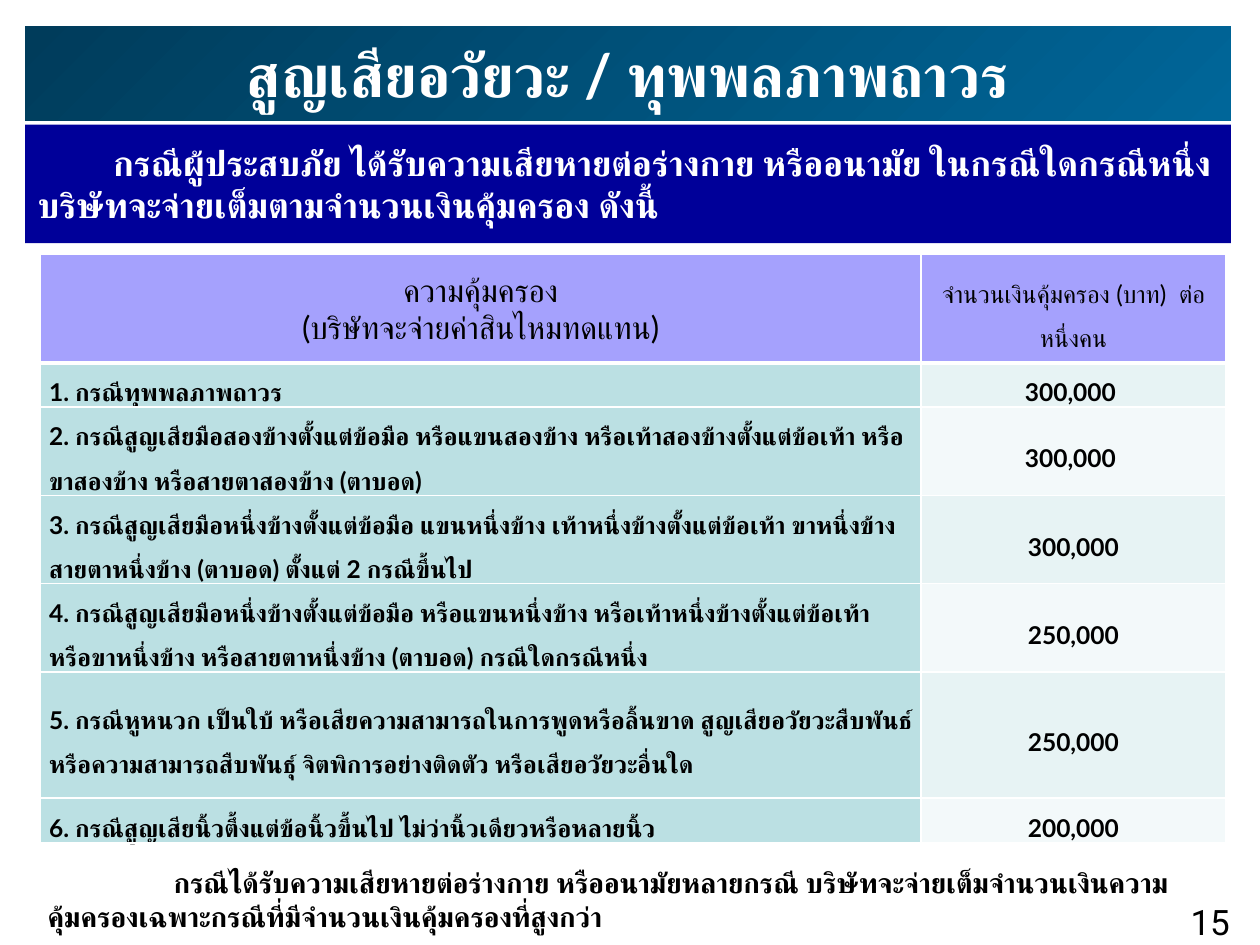
import pptx
import pptx.dml.color
import pptx.enum.shapes
import pptx.enum.text
import pptx.oxml
import pptx.oxml.ns
import pptx.util
import lxml.etree

RGBColor = pptx.dml.color.RGBColor
Align = pptx.enum.text.PP_ALIGN
Anchor = pptx.enum.text.MSO_ANCHOR

WHITE = RGBColor(0xFF, 0xFF, 0xFF)
BLACK = RGBColor(0, 0, 0)
DEEP_TEAL = RGBColor(0x00, 0x3C, 0x5B)
TEAL = RGBColor(0x00, 0x66, 0x99)
NAVY = RGBColor(0x00, 0x00, 0x99)
LILAC = RGBColor(0xA5, 0xA1, 0xFD)
AQUA = RGBColor(0xBB, 0xE0, 0xE3)
STRIPES = [RGBColor(0xE7, 0xF3, 0xF4), RGBColor(0xF3, 0xF9, 0xFA)]

WIDTH, HEIGHT = 10, 7.5
COLUMN_WIDTHS = [6.99, 2.42]
ROW_HEIGHTS = [0.86, 0.35, 0.7, 0.7, 0.7, 1, 0.36]

COVERAGE = [
    ("1. กรณีทุพพลภาพถาวร", "300,000 "),
    ("2. กรณีสูญเสียมือสองข้างตั้งแต่ข้อมือ หรือแขนสองข้าง หรือเท้าสองข้างตั้งแต่ข้อเท้า "
     "หรือขาสองข้าง หรือสายตาสองข้าง (ตาบอด)", "300,000 "),
    ("3. กรณีสูญเสียมือหนึ่งข้างตั้งแต่ข้อมือ แขนหนึ่งข้าง เท้าหนึ่งข้างตั้งแต่ข้อเท้า "
     "ขาหนึ่งข้าง สายตาหนึ่งข้าง (ตาบอด) ตั้งแต่ 2 กรณีขึ้นไป", "300,000"),
    ("4. กรณีสูญเสียมือหนึ่งข้างตั้งแต่ข้อมือ หรือแขนหนึ่งข้าง หรือเท้าหนึ่งข้างตั้งแต่ข้อเท้า "
     "หรือขาหนึ่งข้าง หรือสายตาหนึ่งข้าง (ตาบอด) กรณีใดกรณีหนึ่ง", "250,000"),
    ("5. กรณีหูหนวก เป็นใบ้ หรือเสียความสามารถในการพูดหรือลิ้นขาด "
     "สูญเสียอวัยวะสืบพันธ์หรือความสามารถสืบพันธุ์ จิตพิการอย่างติดตัว หรือเสียอวัยวะอื่นใด",
     "250,000"),
    ("6. กรณีสูญเสียนิ้วตึ้งแต่ข้อนิ้วขึ้นไป ไม่ว่านิ้วเดียวหรือหลายนิ้ว", "200,000"),
]


class CoverageSlide:
    def __init__(self, deck, font="Lato"):
        self.deck = deck
        self.font = font
        self.slide = deck.slides.add_slide(deck.slide_layouts[5])

    def box(self, x, y, width, height):
        slide_width, slide_height = self.deck.slide_width, self.deck.slide_height
        return [round(share * side) for share, side in (
            (x, slide_width), (y, slide_height), (width, slide_width), (height, slide_height))]

    def add_text(self, paragraph, text, size, color=BLACK, bold=False, align=Align.LEFT,
                 spacing=None, indent=0, font=None):
        paragraph.alignment = align
        if spacing:
            paragraph.line_spacing = spacing
        if indent:
            paragraph._p.get_or_add_pPr().set("indent", str(pptx.util.Inches(indent)))
        run = paragraph.add_run()
        run.text = text
        run.font.size = pptx.util.Pt(size)
        run.font.bold = bold
        run.font.color.rgb = color
        run.font.name = font or self.font
        complex_script = lxml.etree.SubElement(run._r.rPr, pptx.oxml.ns.qn("a:cs"))
        complex_script.set("typeface", run.font.name)

    def title(self, text, share):
        heading = self.slide.shapes.title
        heading.left, heading.top, heading.width, heading.height = self.box(*share)
        heading.fill.gradient()
        heading.fill.gradient_angle = 315
        for stop, color in zip(heading.fill.gradient_stops, (DEEP_TEAL, TEAL)):
            stop.color.rgb = color
        frame = heading.text_frame
        frame.auto_size = pptx.enum.text.MSO_AUTO_SIZE.NONE
        frame.vertical_anchor = Anchor.MIDDLE
        self.add_text(frame.paragraphs[0], text, 34, WHITE, True, Align.CENTER)

    def band(self, text, share, indent):
        band = self.slide.shapes.add_shape(
            pptx.enum.shapes.MSO_SHAPE.RECTANGLE, *self.box(*share))
        band.shadow.inherit = False
        band.fill.solid()
        band.fill.fore_color.rgb = NAVY
        band.line.fill.background()
        band.text_frame.vertical_anchor = Anchor.MIDDLE
        self.add_text(band.text_frame.paragraphs[0], text, 20, WHITE, True, indent=indent)

    def note(self, text, share, size, **style):
        frame = self.slide.shapes.add_textbox(*self.box(*share)).text_frame
        frame.word_wrap = True
        self.add_text(frame.paragraphs[0], text, size, **style)

    def borders(self, cell, bottom):
        properties = cell._tc.get_or_add_tcPr()
        sides = {"lnL": 1, "lnR": 1, "lnT": 1, "lnB": bottom}
        for position, (side, points) in enumerate(sides.items()):
            properties.insert(position, pptx.oxml.parse_xml(
                f'<a:{side} {pptx.oxml.ns.nsdecls("a")} w="{pptx.util.Pt(points)}">'
                f'<a:solidFill><a:srgbClr val="{WHITE}"/></a:solidFill></a:{side}>'))

    def cell(self, cell, lines, fill, size=14, bottom=1, **style):
        cell.fill.solid()
        cell.fill.fore_color.rgb = fill
        self.borders(cell, bottom)
        cell.margin_left = cell.margin_right = pptx.util.Inches(0.07)
        cell.margin_top = cell.margin_bottom = 0
        cell.vertical_anchor = Anchor.MIDDLE
        frame = cell.text_frame
        for number, line in enumerate(lines):
            paragraph = frame.add_paragraph() if number else frame.paragraphs[0]
            self.add_text(paragraph, line, size, **style)

    def table(self, header, rows, share):
        table = self.slide.shapes.add_table(
            len(rows) + 1, len(header), *self.box(*share)).table
        for column, width in zip(table.columns, COLUMN_WIDTHS):
            column.width = pptx.util.Inches(width)
        for row, height in zip(table.rows, ROW_HEIGHTS):
            row.height = pptx.util.Inches(height)
        coverage, amount = header
        self.cell(table.cell(0, 0), coverage, LILAC, 18, 3, align=Align.CENTER)
        self.cell(table.cell(0, 1), amount, LILAC, bottom=3, align=Align.CENTER, spacing=1.5)
        for number, (case, payout) in enumerate(rows):
            self.cell(table.cell(number + 1, 0), [case], AQUA, bold=True, spacing=1.5)
            self.cell(table.cell(number + 1, 1), [payout], STRIPES[number % 2],
                      bold=True, align=Align.CENTER, spacing=1.5)


def main():
    deck = pptx.Presentation()
    deck.slide_width = pptx.util.Inches(WIDTH)
    deck.slide_height = pptx.util.Inches(HEIGHT)
    page = CoverageSlide(deck)
    page.title("สูญเสียอวัยวะ / ทุพพลภาพถาวร", (0.02, 0.21 / HEIGHT, 0.957, 0.1))
    page.band("กรณีผู้ประสบภัย ได้รับความเสียหายต่อร่างกาย หรืออนามัย ในกรณีใดกรณีหนึ่ง "
              "บริษัทจะจ่ายเต็มตามจำนวนเงินคุ้มครอง ดังนี้",
              (0.02, 0.99 / HEIGHT, 0.957, 0.94 / HEIGHT), indent=0.6)
    page.table((["ความคุ้มครอง", "(บริษัทจะจ่ายค่าสินไหมทดแทน)"],
                ["จำนวนเงินคุ้มครอง (บาท)  ต่อหนึ่งคน"]),
               COVERAGE, (0.032, 2.02 / HEIGHT, 0.941, sum(ROW_HEIGHTS) / HEIGHT))
    page.note("กรณีได้รับความเสียหายต่อร่างกาย หรืออนามัยหลายกรณี "
              "บริษัทจะจ่ายเต็มจำนวนเงินความคุ้มครองเฉพาะกรณีที่มีจำนวนเงินคุ้มครองที่สูงกว่า",
              (0.028, 6.82 / HEIGHT, 0.929, 0.64 / HEIGHT), 16, bold=True, indent=1)
    page.note("15", (0.859, 7.1 / HEIGHT, 0.127, 0.4 / HEIGHT), 20,
              align=Align.RIGHT, font="Roboto")
    deck.save("out.pptx")


if __name__ == "__main__":
    main()
